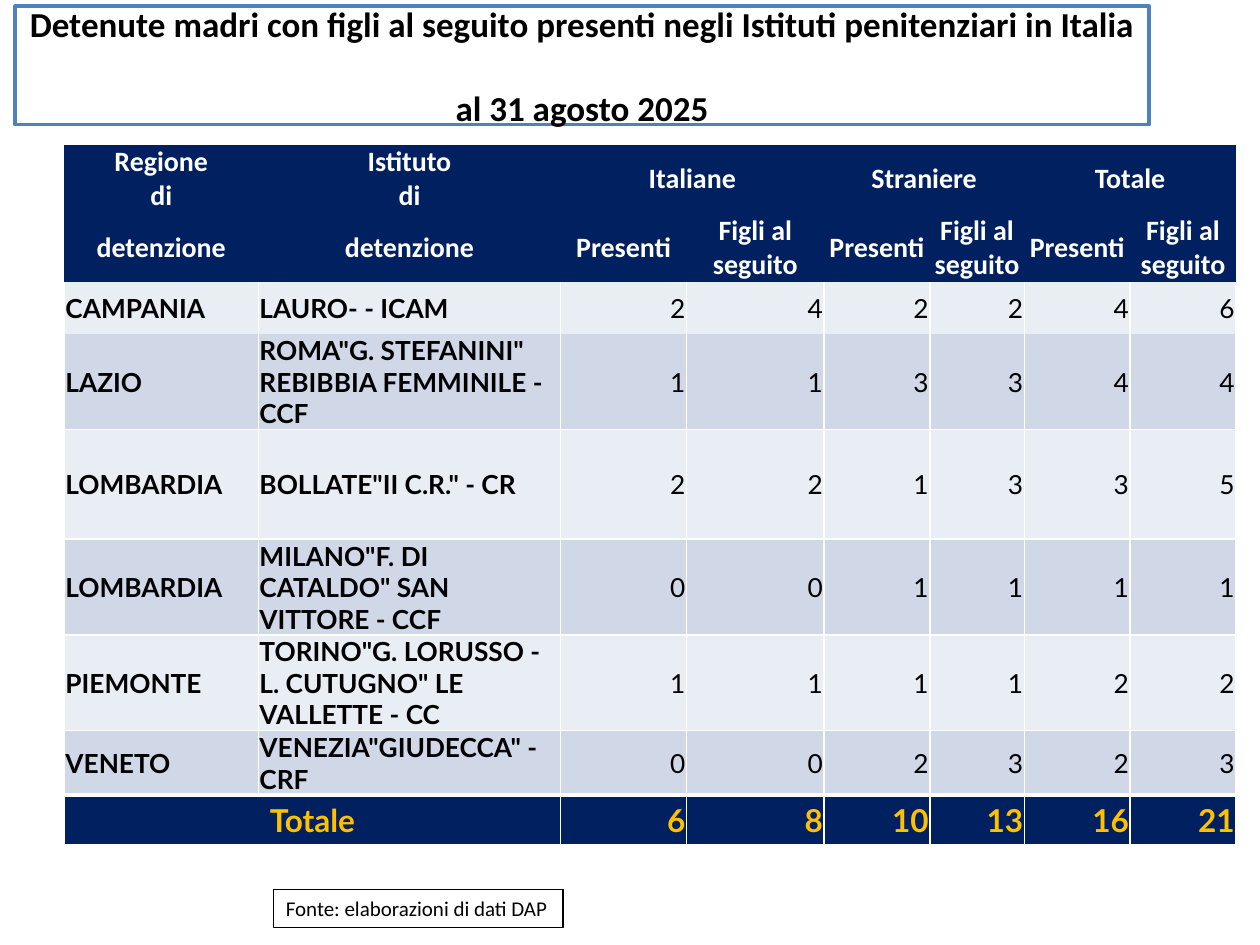
from lxml.etree import SubElement
from pptx import Presentation
from pptx.dml.color import RGBColor
from pptx.enum.text import MSO_ANCHOR as Anchor, MSO_AUTO_SIZE as AutoSize, PP_ALIGN as Align
from pptx.oxml.ns import qn
from pptx.util import Inches, Pt

NAVY = RGBColor(0x00, 0x20, 0x60)
GOLD = RGBColor(0xFF, 0xC0, 0x00)
BLUE = RGBColor(0x4F, 0x81, 0xBD)
PALE = RGBColor(0xE9, 0xED, 0xF4)
MIST = RGBColor(0xD0, 0xD8, 0xE8)
WHITE = RGBColor(0xFF, 0xFF, 0xFF)
BLACK = RGBColor(0x00, 0x00, 0x00)

GRID = Inches(0.1)
COLUMNS = [15.4, 24, 10, 10.9, 8.4, 7.5, 8.4, 8.4]
ROWS = [2.4, 2.4, 4.7, 4.1, 6, 8.7, 6.5, 6.5, 4.4, 4]
HEADER_STUBS = ["Regione", "Istituto"], ["di", "di"], ["detenzione", "detenzione"]
GROUPS = ["Italiane", "Straniere", "Totale"]
MEASURES = ["Presenti", "Figli al seguito"]
PRISONS = [
    ["CAMPANIA", "LAURO- - ICAM", 2, 4, 2, 2, 4, 6],
    ["LAZIO", 'ROMA"G. STEFANINI" REBIBBIA FEMMINILE - CCF', 1, 1, 3, 3, 4, 4],
    ["LOMBARDIA", 'BOLLATE"II C.R." - CR', 2, 2, 1, 3, 3, 5],
    ["LOMBARDIA", 'MILANO"F. DI CATALDO" SAN VITTORE - CCF', 0, 0, 1, 1, 1, 1],
    ["PIEMONTE", 'TORINO"G. LORUSSO - L. CUTUGNO" LE VALLETTE - CC', 1, 1, 1, 1, 2, 2],
    ["VENETO", 'VENEZIA"GIUDECCA" - CRF', 0, 0, 2, 3, 2, 3],
]
TOTALS = ["Totale", "", 6, 8, 10, 13, 16, 21]


def units(*counts):
    """Turn counts of grid columns or rows into lengths."""
    return [int(count * GRID) for count in counts]


def style_text(frame, face, size, color, bold, align):
    """Format every paragraph of a text frame alike."""
    for paragraph in frame.paragraphs:
        paragraph.alignment = align
        for run in paragraph.runs:
            run.font.name, run.font.size = face, Pt(size)
            run.font.bold, run.font.color.rgb = bold, color


def set_borders(cell, **widths):
    """Draw white borders of the given widths and clear the other sides."""
    properties = cell._tc.get_or_add_tcPr()
    for index, side in enumerate("LRTB"):
        width = widths.get(side, 0)
        border = SubElement(properties, qn(f"a:ln{side}"), w=str(Pt(width)))
        properties.insert(index, border)
        if width:
            fill = SubElement(border, qn("a:solidFill"))
            SubElement(fill, qn("a:srgbClr"), val=str(WHITE))
        else:
            SubElement(border, qn("a:noFill"))


def style_cell(cell, fill, inset, borders, *text_style):
    """Apply the fill, margins, borders and text style of a cell."""
    cell.fill.solid()
    cell.fill.fore_color.rgb = fill
    cell.vertical_anchor = Anchor.MIDDLE
    cell.margin_left = cell.margin_right = cell.margin_top = Inches(inset)
    cell.margin_bottom = 0
    set_borders(cell, **borders)
    style_text(cell.text_frame, *text_style)


def fill_header(table):
    """Fill the three header rows and join the group headings."""
    for row, stubs in enumerate(HEADER_STUBS):
        for column, label in enumerate(stubs):
            table.cell(row, column).text = label
    for index, group in enumerate(GROUPS):
        first = 2 + 2 * index
        table.cell(0, first).text = group
        table.cell(0, first).merge(table.cell(1, first + 1))
        for offset, measure in enumerate(MEASURES):
            table.cell(2, first + offset).text = measure
    for row in range(len(HEADER_STUBS)):
        for column in range(len(COLUMNS)):
            style_cell(table.cell(row, column), NAVY, 0, {},
                       "Calibri", 16, WHITE, True, Align.CENTER)


def fill_prisons(table):
    """Fill one banded row for each prison."""
    for index, prison in enumerate(PRISONS):
        borders = {"L": 1, "R": 1}
        if index > 0:
            borders["B"] = 1
        if index > 1:
            borders["T"] = 1
        for column, value in enumerate(prison):
            cell = table.cell(len(HEADER_STUBS) + index, column)
            cell.text = str(value)
            is_label = column < 2
            style_cell(cell, MIST if index % 2 else PALE, 0.01, borders, "Lato", 15,
                       BLACK, is_label, Align.LEFT if is_label else Align.RIGHT)


def fill_totals(table):
    """Fill the closing row of totals."""
    last = len(ROWS) - 1
    table.cell(last, 0).merge(table.cell(last, 1))
    for column, value in enumerate(TOTALS):
        cell = table.cell(last, column)
        cell.text = str(value)
        style_cell(cell, NAVY, 0.01, {"L": 1, "R": 1, "T": 3, "B": 1}, "Lato", 18,
                   GOLD, True, Align.RIGHT if column else Align.CENTER)


def add_prison_table(slide, left, top):
    """Place the table of mothers and children by prison."""
    table = slide.shapes.add_table(len(ROWS), len(COLUMNS),
                                   *units(left, top, sum(COLUMNS), sum(ROWS))).table
    table.first_row = table.horz_banding = False
    for column, width in zip(table.columns, units(*COLUMNS)):
        column.width = width
    for row, height in zip(table.rows, units(*ROWS)):
        row.height = height
    fill_header(table)
    fill_prisons(table)
    fill_totals(table)


def add_framed_text(slide, box, text, line_color, line_width):
    """Place a white outlined text box and return its text frame."""
    panel = slide.shapes.add_textbox(*units(*box))
    panel.fill.solid()
    panel.fill.fore_color.rgb = WHITE
    panel.line.color.rgb = line_color
    panel.line.width = Pt(line_width)
    panel.text_frame.text = text
    return panel.text_frame


def add_heading(slide, box):
    """Place the two-line heading."""
    heading = add_framed_text(
        slide, box,
        "Detenute madri con figli al seguito presenti negli Istituti penitenziari in Italia\n"
        "al 31 agosto 2025", BLUE, 2)
    heading.word_wrap = True
    heading.vertical_anchor = Anchor.MIDDLE
    heading.paragraphs[1].space_before = Pt(24)
    style_text(heading, "Calibri", 20, BLACK, True, Align.CENTER)


def add_source_note(slide, box):
    """Place the note on the data source."""
    note = add_framed_text(slide, box, "Fonte: elaborazioni di dati DAP", BLACK, 0.75)
    note.word_wrap = False
    note.auto_size = AutoSize.SHAPE_TO_FIT_TEXT
    style_text(note, "Calibri", 12, BLACK, False, Align.LEFT)


def main():
    """Build the slide and save it."""
    deck = Presentation()
    deck.slide_width, deck.slide_height = units(100, 75)
    slide = deck.slides.add_slide(deck.slide_layouts[6])
    add_prison_table(slide, 5.1, 11.5)
    add_heading(slide, (1.2, 0.5, 90, 9.4))
    add_source_note(slide, (21.7, 70.6, 23, 3))
    deck.save("out.pptx")


if __name__ == "__main__":
    main()
